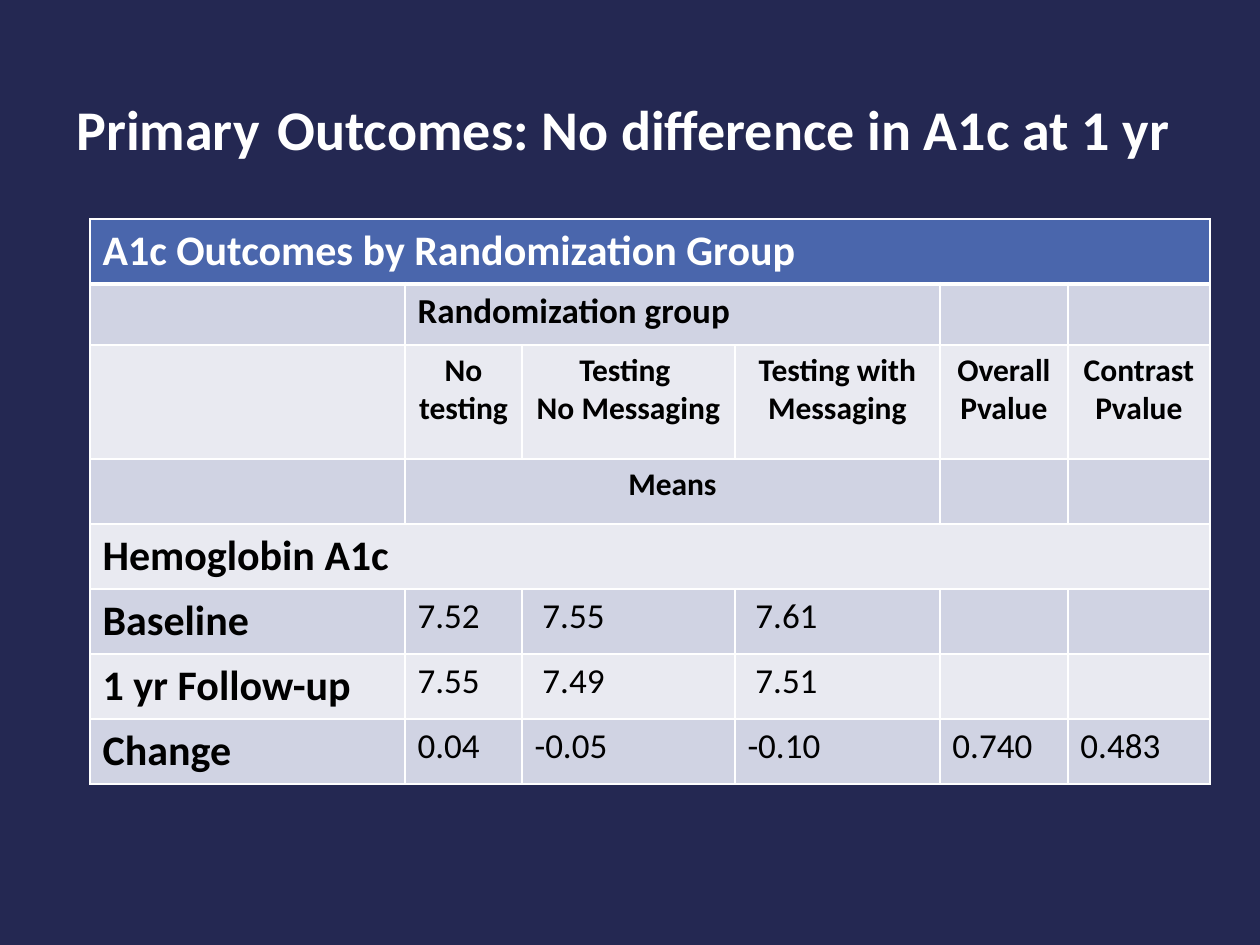
from lxml.etree import SubElement
from pptx import Presentation
from pptx.dml.color import RGBColor
from pptx.enum.text import MSO_ANCHOR, PP_ALIGN
from pptx.oxml.ns import qn
from pptx.util import Pt

PX = 914400 / 126
FONT = "Calibri"
NAVY = RGBColor(0x24, 0x28, 0x52)
BLUE = RGBColor(0x4A, 0x66, 0xAC)
DARK_BAND = RGBColor(0xD0, 0xD3, 0xE3)
LIGHT_BAND = RGBColor(0xE9, 0xEA, 0xF1)
WHITE = RGBColor(0xFF, 0xFF, 0xFF)
BLACK = RGBColor(0, 0, 0)

# Content
TITLE = [("Primary", 32), (" ", 44), ("Outcomes: No difference in A1c at 1 yr", 32)]
ROWS = [
    ["A1c Outcomes by Randomization Group", "", "", "", "", ""],
    ["", "Randomization group", "", "", "", ""],
    ["", "No testing", "Testing \nNo Messaging", "Testing with Messaging",
     "Overall Pvalue", "Contrast Pvalue"],
    ["", "Means", "", "", "", ""],
    ["Hemoglobin A1c", "", "", "", "", ""],
    ["Baseline", "7.52", " 7.55", " 7.61", "", ""],
    ["1 yr Follow-up", "7.55", " 7.49", " 7.51", "", ""],
    ["Change", "0.04", "-0.05", "-0.10", "0.740", "0.483"],
]
COLUMN_WIDTHS = [315, 117, 213, 205, 128, 142]
ROW_HEIGHTS = [65, 61, 114, 65, 65, 65, 65, 65]
MERGES = [(0, 0, 5), (1, 1, 3), (3, 1, 3), (4, 0, 5)]  # row, first, last column
CENTRED_ROWS = (2, 3)
FIRST_DATA_ROW = 5


def px(length):
    return round(length * PX)


def style_run(span, size, bold, color):
    span.font.name = FONT
    span.font.size = Pt(size)
    span.font.bold = bold
    span.font.color.rgb = color


def add_borders(cell, top, bottom):
    properties = cell._tc.get_or_add_tcPr()
    for side, width in (("L", 1), ("R", 1), ("T", top), ("B", bottom)):
        line = SubElement(properties, qn(f"a:ln{side}"), w=str(Pt(width)))
        fill = SubElement(line, qn("a:solidFill"))
        SubElement(fill, qn("a:srgbClr"), val=str(WHITE))


def text_size(row, column):
    if column == 0:
        return 24
    return 20 if row == 1 or row >= FIRST_DATA_ROW else 18


def fill_cell(cell, row, column, text):
    add_borders(cell, top=3 if row == 1 else 1, bottom=3 if row == 0 else 1)
    cell.fill.solid()
    cell.fill.fore_color.rgb = BLUE if row == 0 else DARK_BAND if row % 2 else LIGHT_BAND
    if not text:
        return
    cell.text_frame.text = text
    for para in cell.text_frame.paragraphs:
        if row in CENTRED_ROWS:
            para.alignment = PP_ALIGN.CENTER
        for span in para.runs:
            style_run(span, text_size(row, column),
                      column == 0 or row < FIRST_DATA_ROW,
                      BLACK if row else WHITE)


def add_title(page):
    box = page.shapes.add_textbox(px(64), px(58), px(1145), px(136))
    frame = box.text_frame
    frame.word_wrap = True
    frame.vertical_anchor = MSO_ANCHOR.MIDDLE
    para = frame.paragraphs[0]
    para.line_spacing = 0.9
    for text, size in TITLE:
        span = para.add_run()
        span.text = text
        style_run(span, size, True, WHITE)


def add_outcomes_table(page):
    table = page.shapes.add_table(
        len(ROWS), len(COLUMN_WIDTHS), px(90), px(219),
        px(sum(COLUMN_WIDTHS)), px(sum(ROW_HEIGHTS))).table
    for column, width in zip(table.columns, COLUMN_WIDTHS):
        column.width = px(width)
    for row, height in zip(table.rows, ROW_HEIGHTS):
        row.height = px(height)
    for row, first, last in MERGES:
        table.cell(row, first).merge(table.cell(row, last))
    for row, texts in enumerate(ROWS):
        for column, text in enumerate(texts):
            fill_cell(table.cell(row, column), row, column, text)


def main():
    deck = Presentation()
    deck.slide_width, deck.slide_height = px(1260), px(945)
    page = deck.slides.add_slide(deck.slide_layouts[6])
    page.background.fill.solid()
    page.background.fill.fore_color.rgb = NAVY
    add_title(page)
    add_outcomes_table(page)
    deck.save("out.pptx")


if __name__ == "__main__":
    main()
